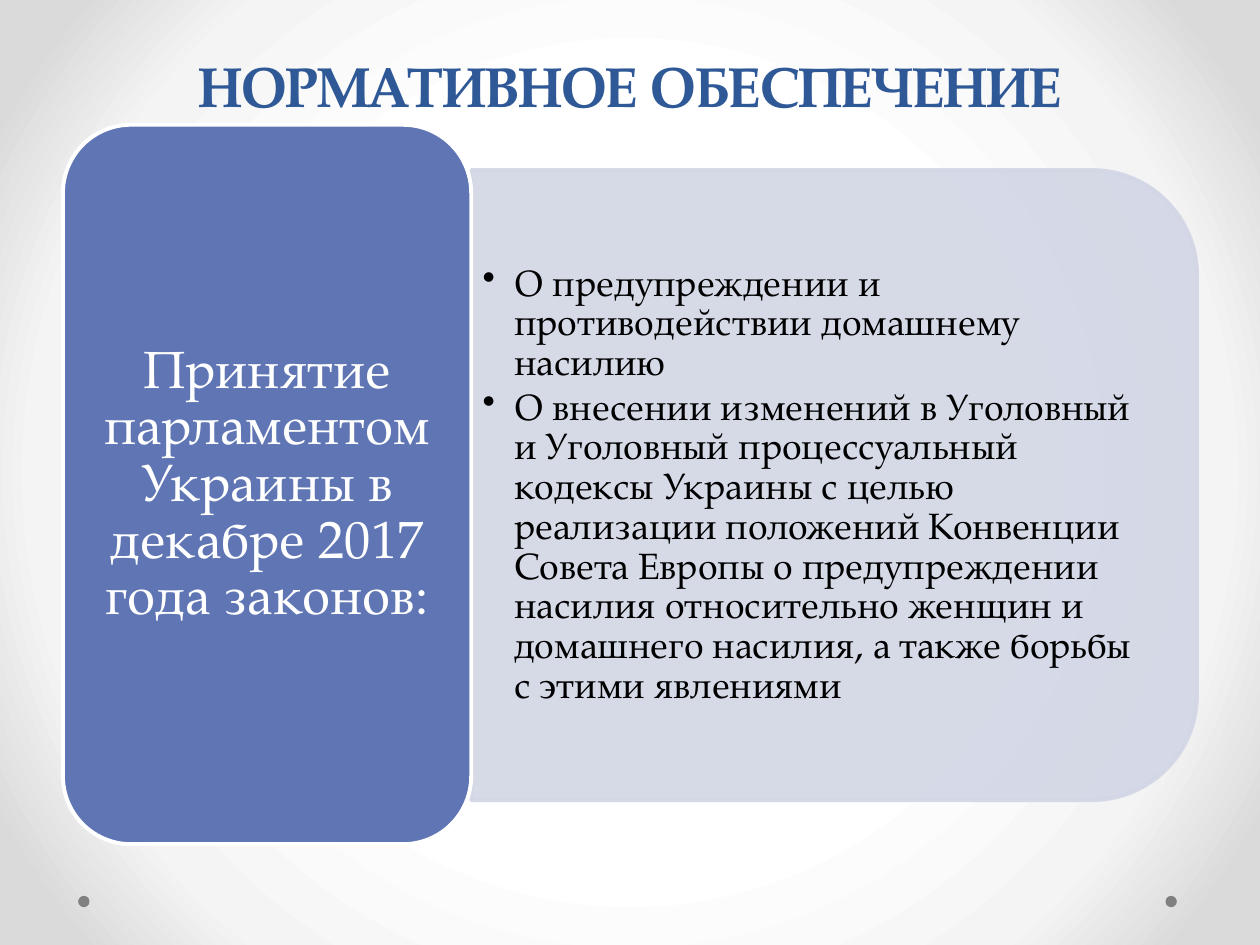
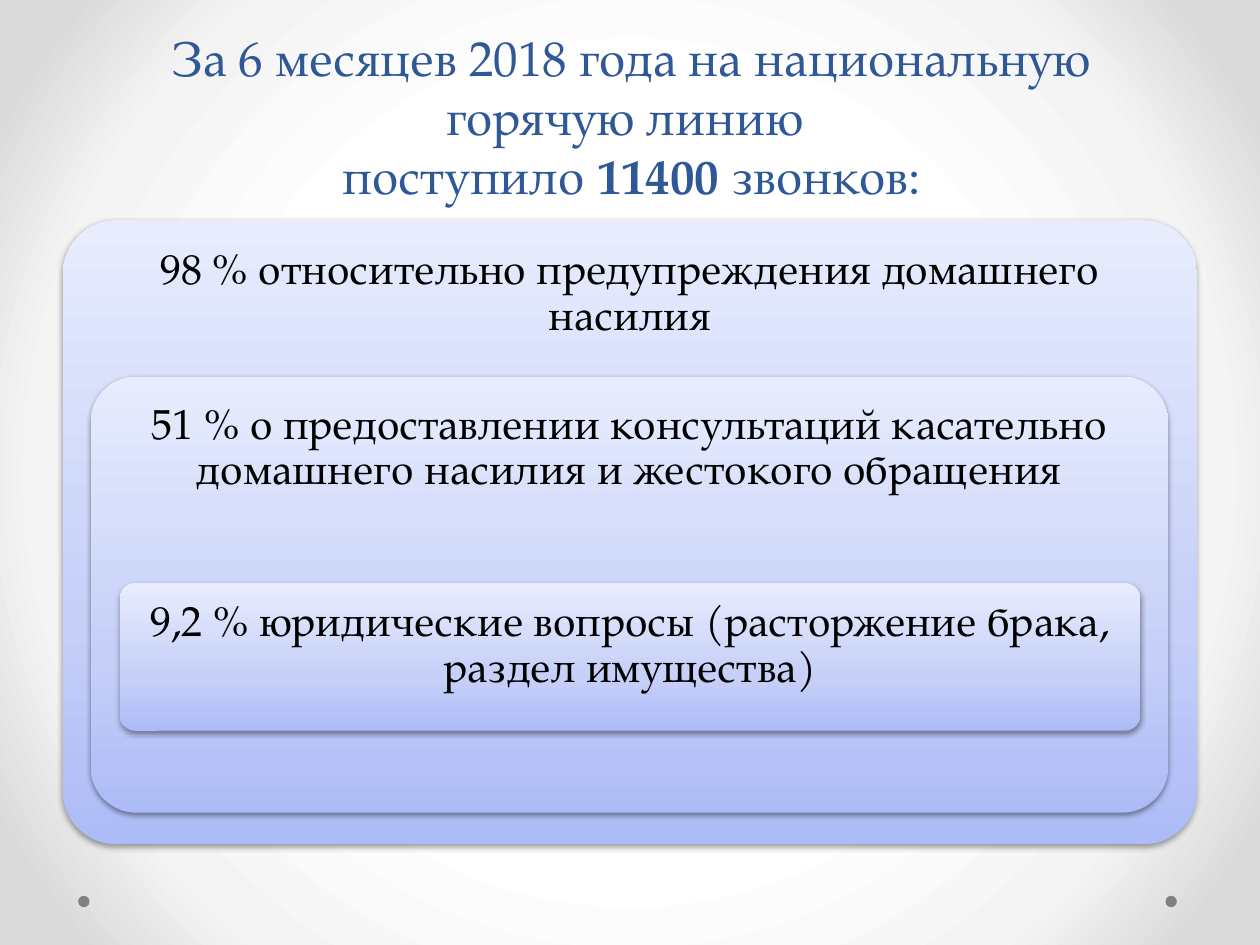
from lxml import etree
from pptx import Presentation
from pptx.dml.color import RGBColor
from pptx.enum.shapes import MSO_SHAPE as Form
from pptx.enum.text import MSO_ANCHOR as Anchor, MSO_AUTO_SIZE as Fit, PP_ALIGN as Align
from pptx.oxml import parse_xml
from pptx.oxml.ns import nsdecls, qn
from pptx.util import Inches, Pt

FONT = "TeX Gyre Pagella"
HUES = {"title": "2F5897", "block": "6076B4", "pale": "D2D6E5", "dot": "808080",
        "white": "FFFFFF", "black": "000000"}
GLOW = [(50, "FFFFFF"), (76, "F4F4F4"), (92, "DADADA")]
SHEEN = [(0, "ADBBF6"), (35, "C5CFF8"), (100, "E8ECFD")]
ROUND = '<a:path path="circle"><a:fillToRect l="50000" t="50000" r="50000" b="50000"/></a:path>'
UP = '<a:lin ang="16200000" scaled="0"/>'
SHADE = (f'<a:effectLst {nsdecls("a")}><a:outerShdw blurRad="{Pt(3.1)}" dist="{Pt(1.6)}" '
         'dir="5400000" rotWithShape="0"><a:srgbClr val="000000"><a:alpha val="38000"/>'
         '</a:srgbClr></a:outerShdw></a:effectLst>')


def hue(name):
    return RGBColor.from_string(HUES[name])


def grad(stops, way):
    marks = "".join(f'<a:gs pos="{pos * 1000}"><a:srgbClr val="{tone}"/></a:gs>'
                    for pos, tone in stops)
    return f'<a:gradFill {nsdecls("a")} rotWithShape="1"><a:gsLst>{marks}</a:gsLst>{way}</a:gradFill>'


def style(item, **looks):
    for key, value in looks.items():
        setattr(item, key, value)


def fade(color, share):
    tone = color.find(".//" + qn("a:srgbClr"))
    etree.SubElement(tone, qn("a:alpha")).set("val", str(share * 1000))


def paint(slide, form, box, fill=None, line=None):
    shape = slide.shapes.add_shape(form, *map(Inches, box))
    shape.shadow.inherit = False
    if fill:
        shape.fill.solid()
        shape.fill.fore_color.rgb = hue(fill)
    if line:
        shape.line.color.rgb = hue(line)
        shape.line.width = Pt(2.25)
    else:
        shape.line.fill.background()
    return shape


def write(par, text, size, tone, bold=False):
    run = par.add_run()
    run.text = text
    style(run.font, name=FONT, size=Pt(size), bold=bold)
    run.font.color.rgb = hue(tone)


def frame(shape, anchor, pads):
    text = shape.text_frame
    sides = ("left", "top", "right", "bottom")
    style(text, word_wrap=True, auto_size=Fit.NONE, vertical_anchor=anchor,
          **{f"margin_{side}": Inches(pad) for side, pad in zip(sides, pads)})
    return text


def label(shape, words, size, tone, anchor, pads):
    par = frame(shape, anchor, pads).paragraphs[0]
    style(par, alignment=Align.CENTER, line_spacing=0.9)
    write(par, words, size, tone)


def head(slide, box, lines, size, gap=None):
    """Each line is a list of (text, bold) parts."""
    title = slide.shapes.title
    style(title, **dict(zip(("left", "top", "width", "height"), map(Inches, box))))
    par = frame(title, Anchor.BOTTOM, (0.1, 0.05, 0.1, 0.05)).paragraphs[0]
    style(par, alignment=Align.CENTER, line_spacing=gap)
    for i, parts in enumerate(lines):
        if i:
            par.add_line_break()
        for text, bold in parts:
            write(par, text, size, "title", bold)


def bullets(slide, box, items):
    area = slide.shapes.add_textbox(*map(Inches, box))
    text = frame(area, Anchor.MIDDLE, (0.09, 0.04, 0.09, 0.04))
    for i, item in enumerate(items):
        par = text.add_paragraph() if i else text.paragraphs[0]
        style(par, line_spacing=0.9, space_after=Pt(3))
        props = par._p.get_or_add_pPr()
        props.set("marL", str(Inches(0.25)))
        props.set("indent", str(-Inches(0.25)))
        etree.SubElement(props, qn("a:buChar")).set("char", "•")
        write(par, item, 21, "black")


def panel(slide, box, curve, words, base):
    shape = paint(slide, Form.ROUNDED_RECTANGLE, box)
    shape.adjustments[0] = curve
    props = shape._element.spPr
    props.find(qn("a:prstGeom")).addnext(parse_xml(grad(SHEEN, UP)))
    props.replace(props.find(qn("a:effectLst")), parse_xml(SHADE))
    label(shape, words, 24, "black", Anchor.TOP, (0.1, 0.1, 0.1, base))


def backdrop(deck):
    root = deck.slide_master._element.cSld
    for old in root.findall(qn("p:bg")):
        root.remove(old)
    root.insert(0, parse_xml(f'<p:bg {nsdecls("p", "a")}><p:bgPr>{grad(GLOW, ROUND)}'
                             '<a:effectLst/></p:bgPr></p:bg>'))


def page(deck):
    slide = deck.slides.add_slide(deck.slide_layouts[5])
    for left in (9.25, 0.62):
        paint(slide, Form.OVAL, (left, 7.11, 0.09, 0.09), "dot")
    return slide


def laws(deck):
    slide = page(deck)
    head(slide, (0.5, 0, 9, 0.99), [[("НОРМАТИВНОЕ ОБЕСПЕЧЕНИЕ", True)]], 32, Pt(58))

    # List on a pale plate, rounded on its right side
    plate = paint(slide, Form.ROUND_2_SAME_RECTANGLE, (4.12, 0.97, 5, 5.76), "pale", "pale")
    plate.rotation = 90
    props = plate._element.spPr
    for part in (props.find(qn("a:solidFill")), props.find(qn("a:ln"))):
        fade(part, 90)
    bullets(slide, (3.74, 1.59, 5.52, 4.52), [
        "О предупреждении и противодействии домашнему насилию",
        "О внесении изменений в Уголовный и Уголовный процессуальный кодексы Украины "
        "с целью реализации положений Конвенции Совета Европы о предупреждении насилия "
        "относительно женщин и домашнего насилия, а также борьбы с этими явлениями"])

    # Block that names the list
    block = paint(slide, Form.ROUNDED_RECTANGLE, (0.5, 0.99, 3.24, 5.71), "block", "white")
    label(block, "Принятие парламентом Украины в декабре 2017 года законов:",
          30, "white", Anchor.MIDDLE, (0.12, 0.06, 0.12, 0.06))


def calls(deck):
    slide = page(deck)
    head(slide, (0.51, 0.44, 9, 1.23), [
        [("За 6 месяцев 2018 года на национальную горячую линию ", False)],
        [("поступило ", False), ("11400 ", True), ("звонков:", False)]], 28)

    # Nested panels, from the outer to the inner
    for box, curve, base, words in (
            ((0.5, 1.75, 9, 4.95), 0.085, 3.84,
             "98 % относительно предупреждения домашнего насилия"),
            ((0.72, 2.99, 8.55, 3.46), 0.105, 2.2,
             "51 % о предоставлении консультаций касательно домашнего насилия "
             "и жестокого обращения"),
            ((0.95, 4.63, 8.1, 1.17), 0.105, 0.19,
             "9,2 % юридические вопросы (расторжение брака, раздел имущества)")):
        panel(slide, box, curve, words, base)


def main():
    deck = Presentation()
    style(deck, slide_width=Inches(10), slide_height=Inches(7.5))
    backdrop(deck)
    laws(deck)
    calls(deck)
    deck.save("out.pptx")


if __name__ == "__main__":
    main()
